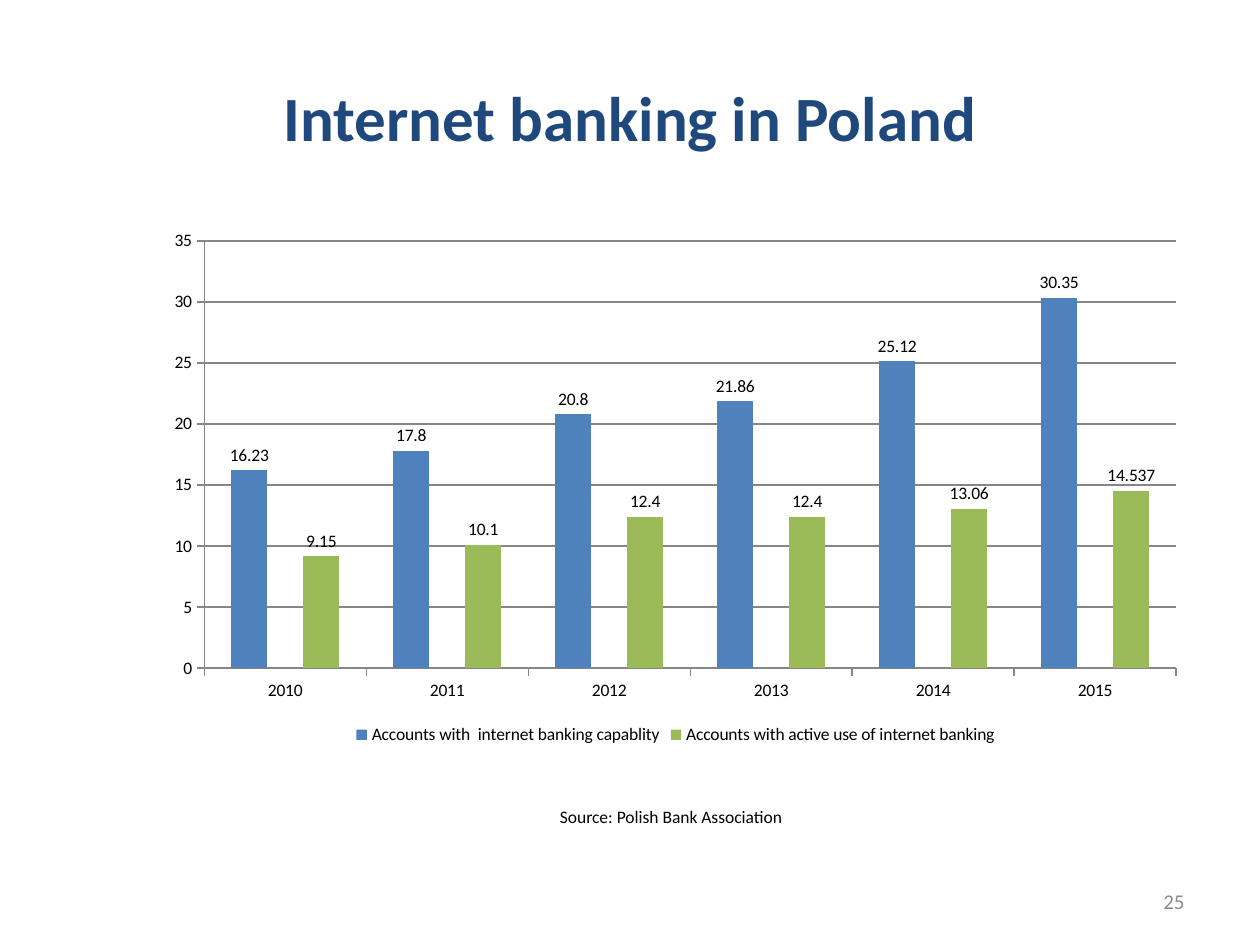
from dataclasses import dataclass

from lxml import etree
from pptx import Presentation
from pptx import util as u
from pptx.chart import data as cd
from pptx.dml import color
from pptx.enum import chart as ch
from pptx.enum import text
from pptx.oxml import ns


@dataclass(frozen=True)
class Theme:
    font: str = "Calibri"
    title: str = "1F497D"
    text: str = "000000"
    muted: str = "8C8C8C"
    axis: str = "868686"
    title_size: int = 36
    number_size: int = 12
    small_size: int = 10


THEME = Theme()
YEARS = ["2010", "2011", "2012", "2013", "2014", "2015"]
SERIES = [
    ("Accounts with  internet banking capablity",
     [16.23, 17.8, 20.8, 21.86, 25.12, 30.35], "4F81BD"),
    ("Series 2", [None] * len(YEARS), "C0504D"),
    ("Accounts with active use of internet banking",
     [9.15, 10.1, 12.4, 12.4, 13.06, 14.537], "9BBB59"),
]
EMPTY_SERIES = 1


def rgb(value):
    return color.RGBColor.from_string(value)


def style_font(font, size, fill, bold=False):
    font.name = THEME.font
    font.size = u.Pt(size)
    font.bold = bold
    font.color.rgb = rgb(fill)


def write(sp, content, size, fill, align, bold=False):
    tf = sp.text_frame
    tf.text = content
    p = tf.paragraphs[0]
    p.alignment = align
    style_font(p.runs[0].font, size, fill, bold)
    return tf


def add_title(s, content):
    sp = s.shapes.title
    sp.left, sp.top = u.Inches(0.5), u.Inches(0.3)
    sp.width, sp.height = u.Inches(9), u.Inches(1.25)
    tf = write(sp, content, THEME.title_size, THEME.title,
               text.PP_ALIGN.CENTER, bold=True)
    tf.vertical_anchor = text.MSO_ANCHOR.MIDDLE


def add_label(s, box, content, size, fill, align, anchor, wrap):
    sp = s.shapes.add_textbox(*map(u.Inches, box))
    tf = write(sp, content, size, fill, align)
    tf.vertical_anchor = anchor
    tf.word_wrap = wrap


def style_axis(axis):
    axis.major_tick_mark = ch.XL_TICK_MARK.OUTSIDE
    axis.minor_tick_mark = ch.XL_TICK_MARK.NONE
    axis.format.line.color.rgb = rgb(THEME.axis)
    axis.format.line.width = u.Pt(0.75)


def hide_legend_entry(legend, index):
    entry = etree.Element(ns.qn("c:legendEntry"))
    etree.SubElement(entry, ns.qn("c:idx")).set("val", str(index))
    etree.SubElement(entry, ns.qn("c:delete")).set("val", "1")
    legend._element.find(ns.qn("c:legendPos")).addnext(entry)


def add_accounts_chart(s):
    data = cd.CategoryChartData()
    data.categories = YEARS
    for name, values, _ in SERIES:
        data.add_series(name, values)
    box = map(u.Inches, (1.22, 1.75, 8.28, 4.2))
    chart = s.shapes.add_chart(
        ch.XL_CHART_TYPE.COLUMN_CLUSTERED, *box, data).chart
    style_font(chart.font, THEME.small_size, THEME.text)
    chart.has_title = False

    chart.has_legend = True
    chart.legend.position = ch.XL_LEGEND_POSITION.BOTTOM
    chart.legend.include_in_layout = False
    hide_legend_entry(chart.legend, EMPTY_SERIES)

    style_axis(chart.category_axis)
    style_axis(chart.value_axis)
    chart.value_axis.has_major_gridlines = True
    grid = chart.value_axis.major_gridlines.format.line
    grid.color.rgb = rgb(THEME.axis)
    grid.width = u.Pt(0.75)

    plot = chart.plots[0]
    plot.gap_width = 150
    plot.overlap = 0
    plot.vary_by_categories = False
    for i, (series, (_, _, fill)) in enumerate(zip(plot.series, SERIES)):
        series.format.fill.solid()
        series.format.fill.fore_color.rgb = rgb(fill)
        series.invert_if_negative = False
        if i != EMPTY_SERIES:
            series.data_labels.show_value = True
            series.data_labels.position = ch.XL_LABEL_POSITION.OUTSIDE_END


def main():
    prs = Presentation()
    prs.slide_width, prs.slide_height = u.Inches(10), u.Inches(7.5)
    s = prs.slides.add_slide(prs.slide_layouts[5])
    add_title(s, "Internet banking in Poland")
    add_label(s, (7.17, 6.95, 2.33, 0.4), "25", THEME.number_size, THEME.muted,
              text.PP_ALIGN.RIGHT, text.MSO_ANCHOR.MIDDLE, True)
    add_label(s, (4.33, 6.35, 1.99, 0.27), "Source: Polish Bank Association",
              THEME.small_size, THEME.text,
              text.PP_ALIGN.CENTER, text.MSO_ANCHOR.TOP, False)
    add_accounts_chart(s)
    prs.save("out.pptx")


if __name__ == "__main__":
    main()
